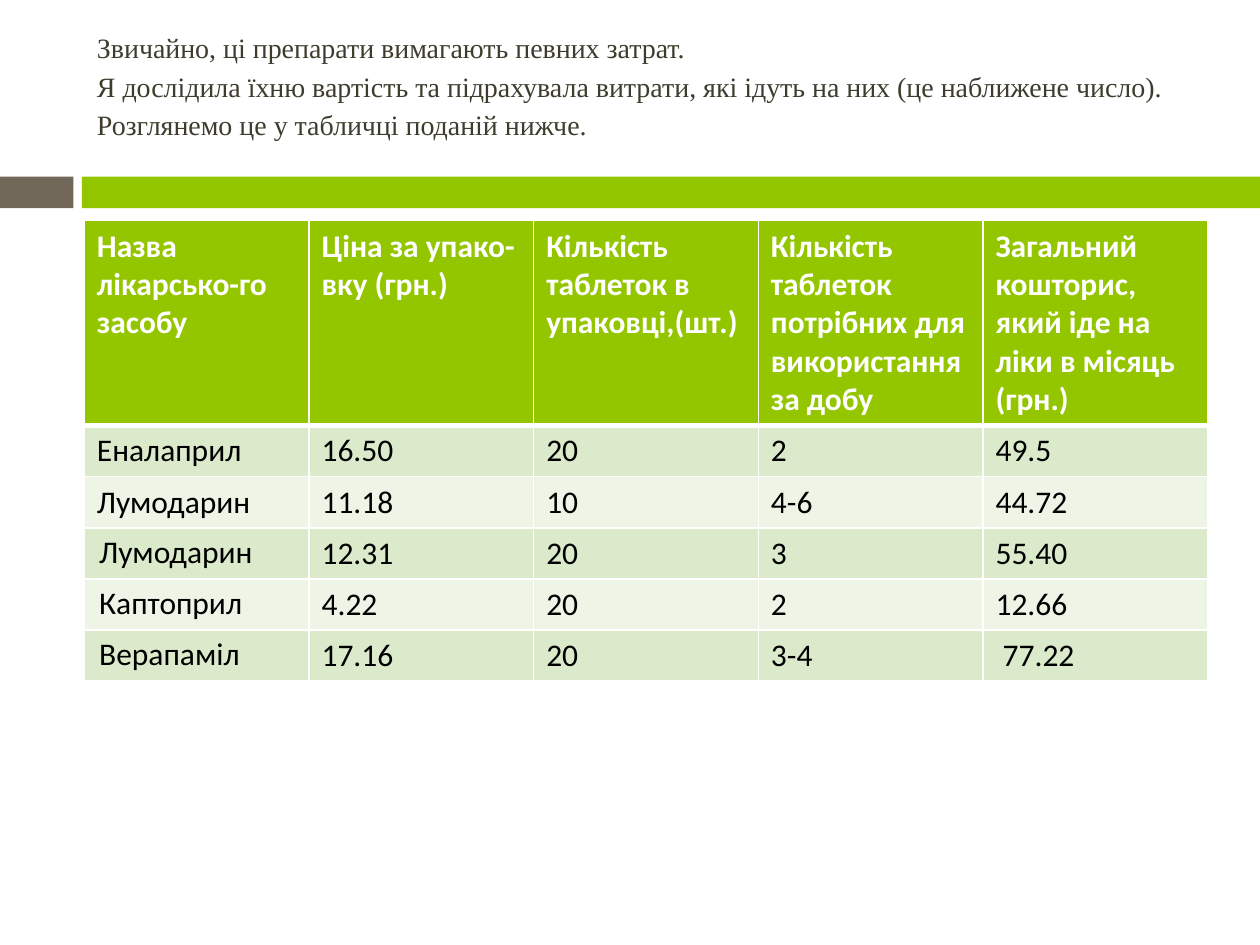
from dataclasses import dataclass

import lxml.etree
import pptx
import pptx.dml.color
import pptx.enum.shapes
import pptx.enum.text
import pptx.oxml.ns
import pptx.util
from pptx.util import Cm


def rgb(code):
    return pptx.dml.color.RGBColor.from_string(code)


@dataclass(frozen=True)
class Theme:
    green: str = "94C600"
    brown: str = "71685A"
    title: str = "3E3D2D"
    body: str = "000000"
    white: str = "FFFFFF"
    bands: tuple = ("DCEACC", "EEF5E7")
    title_font: str = "Times New Roman"
    table_font: str = "Calibri"
    title_size: int = 16
    table_size: int = 18


THEME = Theme()

TITLE_LINES = [
    "Звичайно, ці препарати вимагають певних затрат.",
    "Я дослідила їхню вартість та підрахувала витрати, які ідуть на них (це наближене число).",
    "Розглянемо це у табличці поданій нижче.",
]
HEADER = [
    "Назва лікарсько-го засобу",
    "Ціна за упако-вку (грн.)",
    "Кількість таблеток в упаковці,(шт.)",
    "Кількість таблеток потрібних для використання за добу",
    "Загальний кошторис, який іде на ліки в місяць (грн.)",
]
MEDICINES = [
    ["Еналаприл", "16.50", "20", "2", "49.5"],
    ["Лумодарин", "11.18", "10", "4-6", "44.72"],
    ["Лумодарин", "12.31", "20", "3", "55.40"],
    ["Каптоприл", "4.22", "20", "2", "12.66"],
    ["Верапаміл", "17.16", "20", "3-4", " 77.22"],
]
FIRST_SPACED_ROW = 3
LEFT, WIDTH = Cm(1.7), Cm(22.65)


def format_text(paragraph, font_name, size, color, bold=False):
    paragraph.font.name = font_name
    paragraph.font.size = pptx.util.Pt(size)
    paragraph.font.color.rgb = rgb(color)
    paragraph.font.bold = bold


def space_paragraph(paragraph):
    paragraph.line_spacing = 1.15
    paragraph.space_after = pptx.util.Pt(10)


def add_bar(slide, left, width, color):
    bar = slide.shapes.add_shape(
        pptx.enum.shapes.MSO_SHAPE.RECTANGLE, left, Cm(3.56), width, Cm(0.64))
    bar.shadow.inherit = False
    bar.fill.solid()
    bar.fill.fore_color.rgb = rgb(color)
    bar.line.fill.background()


def fill_title(slide):
    title = slide.shapes.title
    title.left, title.top, title.width, title.height = LEFT, Cm(0.64), WIDTH, Cm(2.74)
    frame = title.text_frame
    frame.text = "\v".join(TITLE_LINES)
    frame.word_wrap = True
    frame.auto_size = pptx.enum.text.MSO_AUTO_SIZE.NONE
    frame.vertical_anchor = pptx.enum.text.MSO_ANCHOR.MIDDLE
    frame.margin_top, frame.margin_bottom = 0, Cm(0.66)
    paragraph = frame.paragraphs[0]
    paragraph.alignment = pptx.enum.text.PP_ALIGN.LEFT
    space_paragraph(paragraph)
    format_text(paragraph, THEME.title_font, THEME.title_size, THEME.title)


def add_borders(cell, top, bottom):
    """Draw white cell edges; top and bottom are widths in points."""
    qn = pptx.oxml.ns.qn
    properties = cell._tc.get_or_add_tcPr()
    for side, width in (("L", 1), ("R", 1), ("T", top), ("B", bottom)):
        line = lxml.etree.SubElement(
            properties, qn(f"a:ln{side}"), w=str(pptx.util.Pt(width)))
        fill = lxml.etree.SubElement(line, qn("a:solidFill"))
        lxml.etree.SubElement(fill, qn("a:srgbClr"), val=THEME.white)


def fill_cell(cell, text, row, column):
    is_header = row == 0
    add_borders(cell, top=3 if row == 1 else 1, bottom=3 if is_header else 1)
    cell.fill.solid()
    cell.fill.fore_color.rgb = rgb(
        THEME.green if is_header else THEME.bands[(row - 1) % 2])
    cell.text = text
    paragraph = cell.text_frame.paragraphs[0]
    format_text(paragraph, THEME.table_font, THEME.table_size,
                THEME.white if is_header else THEME.body, bold=is_header)
    if column == 0 and row >= FIRST_SPACED_ROW:
        cell.margin_left = cell.margin_right = Cm(0.3)
        cell.margin_top = cell.margin_bottom = 0
        space_paragraph(paragraph)


def add_cost_table(slide):
    rows = [HEADER] + MEDICINES
    header_height, row_height = Cm(4.09), Cm(1.03)
    table = slide.shapes.add_table(
        len(rows), len(HEADER), LEFT, Cm(4.45), WIDTH,
        header_height + row_height * len(MEDICINES)).table
    for row, texts in enumerate(rows):
        table.rows[row].height = row_height if row else header_height
        for column, text in enumerate(texts):
            fill_cell(table.cell(row, column), text, row, column)


def main():
    presentation = pptx.Presentation()
    presentation.slide_width, presentation.slide_height = Cm(25.4), Cm(19.05)
    slide = presentation.slides.add_slide(presentation.slide_layouts[5])
    add_bar(slide, 0, Cm(1.48), THEME.brown)
    add_bar(slide, Cm(1.65), Cm(23.75), THEME.green)
    fill_title(slide)
    add_cost_table(slide)
    presentation.save("out.pptx")


if __name__ == "__main__":
    main()
